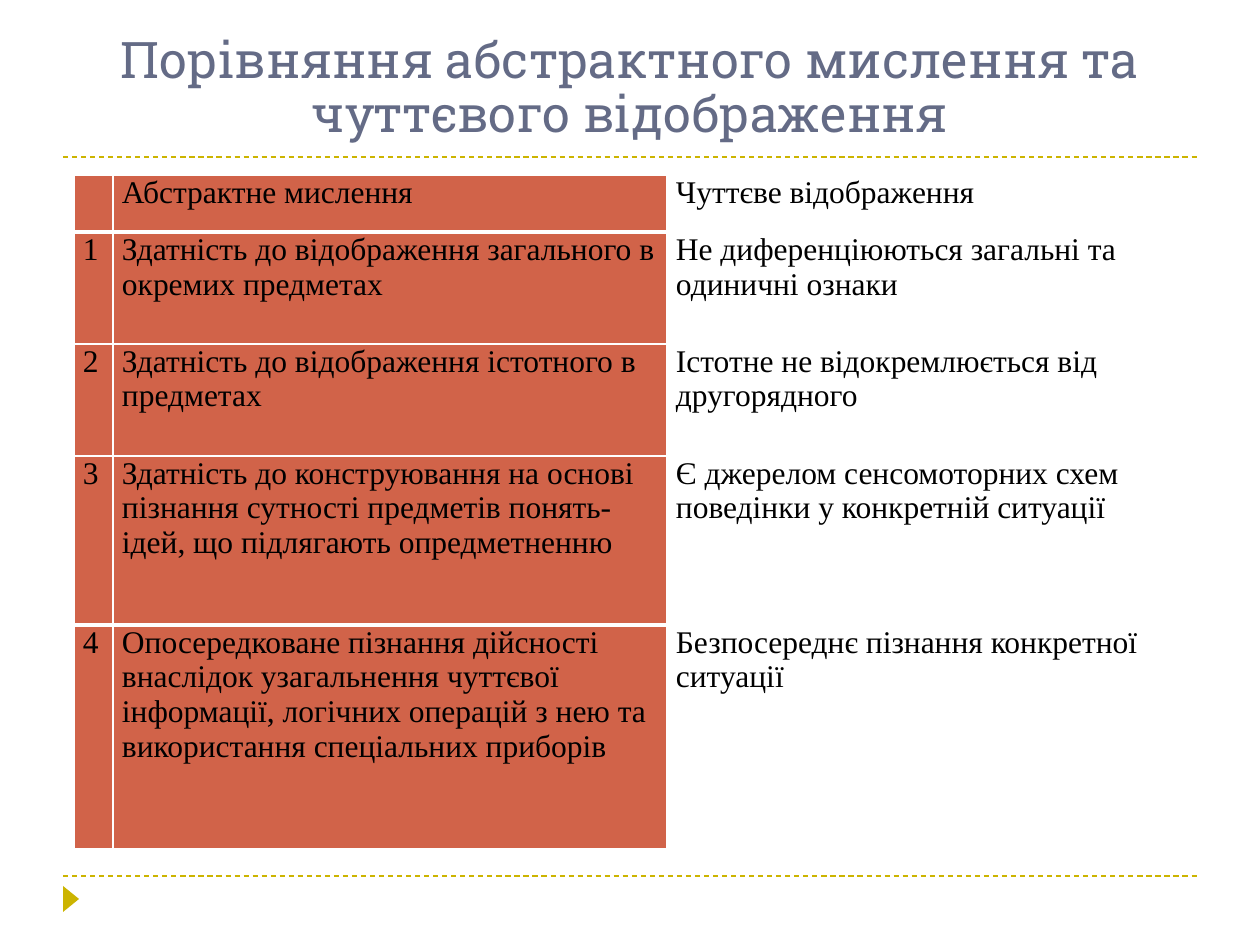
import pptx
import pptx.util
import pptx.dml.color
import pptx.enum.dml
import pptx.enum.shapes
import pptx.enum.text
import pptx.oxml
import pptx.oxml.ns
from dataclasses import dataclass

PX = 914400 / 126  # EMU in one px


@dataclass(frozen=True)
class Theme:
    accent: str = "CCB400"
    title: str = "646B86"
    text: str = "000000"
    cell: str = "D16349"
    border: str = "FFFFFF"
    title_font: str = "Roboto Slab"
    body_font: str = "Times New Roman"
    title_size: float = 28.8
    body_size: float = 18
    rule_width: float = 0.75


THEME = Theme()

TITLE = "Порівняння абстрактного мислення та чуттєвого відображення"
COLUMNS = [39, 554, 528]
ROW_HEIGHTS = [57, 112, 112, 169, 224]
ROWS = [
    ("", "Абстрактне мислення", "Чуттєве відображення"),
    ("1", "Здатність до відображення загального в окремих предметах",
     "Не диференціюються загальні та одиничні ознаки"),
    ("2", "Здатність до відображення істотного в предметах",
     "Істотне не відокремлюється від другорядного"),
    ("3", "Здатність до конструювання на основі пізнання сутності предметів "
          "понять-ідей, що підлягають опредметненню",
     "Є джерелом сенсомоторних схем поведінки у конкретній ситуації"),
    ("4", "Опосередковане пізнання дійсності внаслідок узагальнення чуттєвої "
          "інформації, логічних операцій з нею та використання спеціальних приборів",
     "Безпосереднє пізнання конкретної ситуації"),
]


def px(n):
    return pptx.util.Emu(round(n * PX))


def rgb(value):
    return pptx.dml.color.RGBColor.from_string(value)


def set_attrs(obj, values):
    for name, value in values.items():
        setattr(obj, name, value)


def write(p, text, font, size, color):
    r = p.add_run()
    r.text = text
    set_attrs(r.font, {"name": font, "size": pptx.util.Pt(size), "bold": False})
    r.font.color.rgb = rgb(color)


def add_rule(slide, y):
    """Dashed line across the slide between its side margins."""
    line = slide.shapes.add_connector(
        pptx.enum.shapes.MSO_CONNECTOR.STRAIGHT, px(63), px(y), px(1197), px(y))
    set_attrs(line.line, {"width": pptx.util.Pt(THEME.rule_width),
                          "dash_style": pptx.enum.dml.MSO_LINE.DASH})
    line.line.color.rgb = rgb(THEME.accent)
    pptx.oxml.ns.qn("a:effectLst")
    line._element.spPr.append(pptx.oxml.parse_xml(
        f'<a:effectLst {pptx.oxml.ns.nsdecls("a")}/>'))


def add_marker(slide):
    """Triangle pointing right, below the bottom rule."""
    sp = slide.shapes.add_shape(
        pptx.enum.shapes.MSO_SHAPE.ISOSCELES_TRIANGLE, px(58), px(891), px(26), px(16))
    sp.rotation = 90
    sp.shadow.inherit = False
    sp.fill.solid()
    sp.fill.fore_color.rgb = rgb(THEME.accent)
    sp.line.fill.background()


def add_title(slide):
    tf = slide.shapes.add_textbox(px(63), px(21), px(1134), px(136)).text_frame
    set_attrs(tf, {"word_wrap": True,
                   "vertical_anchor": pptx.enum.text.MSO_ANCHOR.MIDDLE})
    p = tf.paragraphs[0]
    set_attrs(p, {"alignment": pptx.enum.text.PP_ALIGN.CENTER, "line_spacing": 0.9})
    write(p, TITLE, THEME.title_font, THEME.title_size, THEME.title)


def set_borders(cell, widths):
    """Widths in points, by side; borders come before the fill in the XML."""
    tcPr = cell._tc.get_or_add_tcPr()
    for i, (side, width) in enumerate(widths.items()):
        tcPr.insert(i, pptx.oxml.parse_xml(
            f'<a:ln{side} {pptx.oxml.ns.nsdecls("a")} w="{pptx.util.Pt(width)}">'
            f'<a:solidFill><a:srgbClr val="{THEME.border}"/></a:solidFill>'
            f'</a:ln{side}>'))


def fill_cell(cell, text, colored):
    set_attrs(cell, {"margin_left": px(9), "margin_right": px(9),
                     "margin_top": 0, "margin_bottom": 0})
    if colored:
        cell.fill.solid()
        cell.fill.fore_color.rgb = rgb(THEME.cell)
    else:
        cell.fill.background()
    p = cell.text_frame.paragraphs[0]
    if text:
        write(p, text, THEME.body_font, THEME.body_size, THEME.text)
    else:
        p.font.size = pptx.util.Pt(THEME.body_size)


def add_comparison(slide):
    table = slide.shapes.add_table(
        len(ROWS), len(COLUMNS), px(74), px(175),
        px(sum(COLUMNS)), px(sum(ROW_HEIGHTS))).table
    set_attrs(table, {"first_row": False, "horz_banding": False})
    for column, width in zip(table.columns, COLUMNS):
        column.width = px(width)
    last = len(ROWS) - 1
    for i, texts in enumerate(ROWS):
        table.rows[i].height = px(ROW_HEIGHTS[i])
        # Thick borders set off the header and the last row
        top = 3 if i in (1, last) else 1
        bottom = 3 if i in (0, last - 1) else 1
        for j, text in enumerate(texts):
            cell = table.cell(i, j)
            fill_cell(cell, text, colored=j < 2)
            set_borders(cell, {"L": 1, "R": 1, "T": top, "B": bottom})


def main():
    prs = pptx.Presentation()
    set_attrs(prs, {"slide_width": px(1260), "slide_height": px(945)})
    slide = prs.slides.add_slide(prs.slide_layouts[6])

    # Frame of the slide
    for y in (876, 157):
        add_rule(slide, y)
    add_marker(slide)

    # Content
    add_title(slide)
    add_comparison(slide)
    prs.save("out.pptx")


if __name__ == "__main__":
    main()
